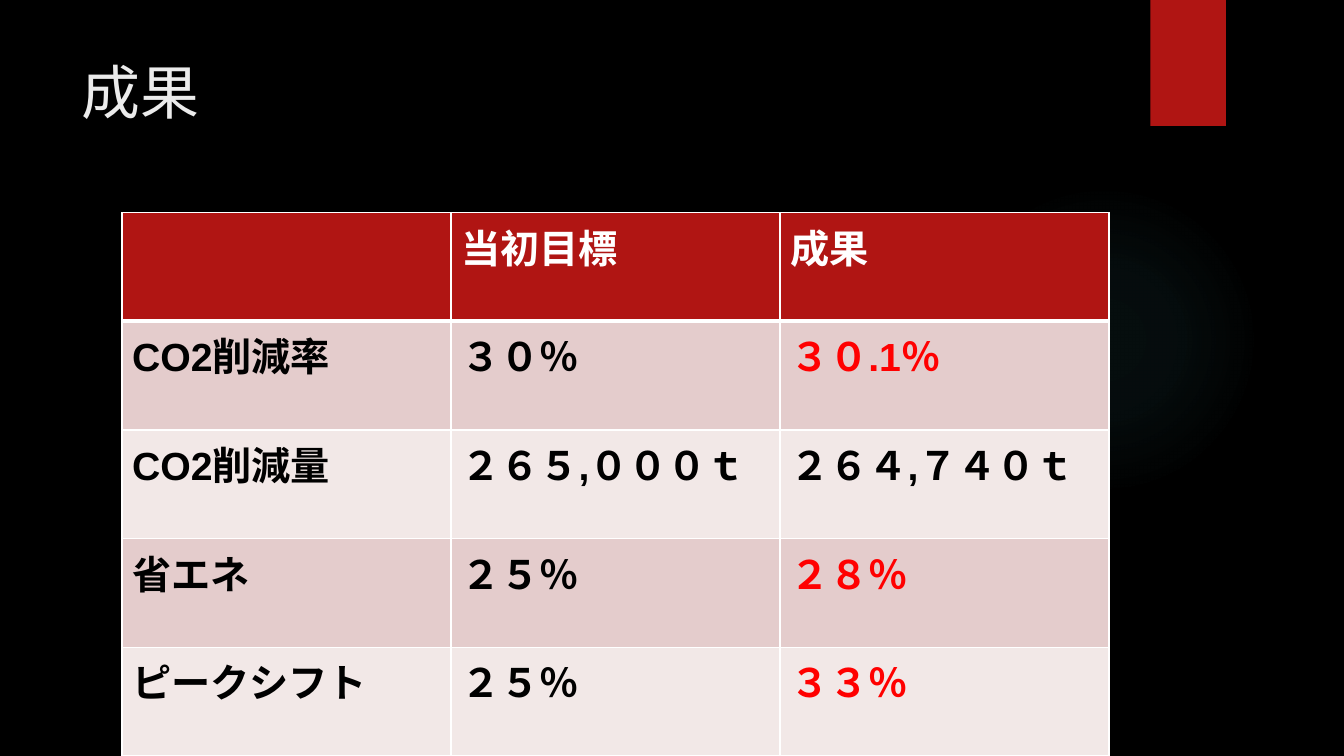
"""Build the results slide: a title and a table of targets against outcomes."""
from pptx import Presentation
from pptx.dml.color import RGBColor as RGB
from pptx.enum.shapes import MSO_SHAPE as SHAPE
from pptx.enum.text import MSO_ANCHOR as ANCHOR, PP_ALIGN as ALIGN
from pptx.oxml import parse_xml
from pptx.oxml.ns import nsdecls
from pptx.util import Inches, Pt

BLACK = RGB(0x00, 0x00, 0x00)
WHITE = RGB(0xFF, 0xFF, 0xFF)
PALE = RGB(0xEB, 0xEB, 0xEB)
CRIMSON = RGB(0xB0, 0x15, 0x13)
RED = RGB(0xFF, 0x00, 0x00)
ROSE = RGB(0xE4, 0xCC, 0xCC)
BLUSH = RGB(0xF2, 0xE8, 0xE7)
TEAL = RGB(0x50, 0xB9, 0xC1)


def add_plain(kind, left, top, width, height):
    shape = slide.shapes.add_shape(
        kind, Inches(left), Inches(top), Inches(width), Inches(height))
    shape.shadow.inherit = False
    shape.line.fill.background()
    return shape


def add_edge(cell, side, width):
    cell._tc.get_or_add_tcPr().append(parse_xml(
        f'<a:ln{side} {nsdecls("a")} w="{Pt(width)}"><a:solidFill>'
        f'<a:srgbClr val="{WHITE}"/></a:solidFill></a:ln{side}>'))


prs = Presentation()
prs.slide_width, prs.slide_height = Inches(13.33), Inches(7.5)
slide = prs.slides.add_slide(prs.slide_layouts[5])
slide.background.fill.solid()
slide.background.fill.fore_color.rgb = BLACK

glow = add_plain(SHAPE.OVAL, 9.41, 1.83, 3.08, 3.08)
stops = "".join(
    f'<a:gs pos="{pos * 1000}"><a:srgbClr val="{TEAL}">'
    f'<a:alpha val="{alpha * 1000}"/></a:srgbClr></a:gs>'
    for pos, alpha in [(0, 7), (36, 6), (69, 0)])
glow._element.spPr.prstGeom.addnext(parse_xml(
    f'<a:gradFill {nsdecls("a")}><a:gsLst>{stops}</a:gsLst><a:path path="circle">'
    '<a:fillToRect l="50000" t="50000" r="50000" b="50000"/></a:path></a:gradFill>'))

tab = add_plain(SHAPE.RECTANGLE, 11.41, 0, 0.75, 1.25)
tab.fill.solid()
tab.fill.fore_color.rgb = CRIMSON

title = slide.shapes.title
slide.shapes._spTree.append(title._element)
title.left, title.top = Inches(0.71), Inches(0.5)
title.width, title.height = Inches(10.29), Inches(1.53)
title.text_frame.text = "成果"
title.text_frame.vertical_anchor = ANCHOR.TOP
head = title.text_frame.paragraphs[0]
head.alignment = ALIGN.LEFT
font = head.runs[0].font
font.name, font.size = "TeX Gyre Adventor", Pt(42)
font.color.rgb = PALE

rows = [
    ("", "当初目標", "成果"),
    ("CO2削減率", "３０％", "３０.1％"),
    ("CO2削減量", "２６５,０００ｔ", "２６４,７４０ｔ"),
    ("省エネ", "２５％", "２８％"),
    ("ピークシフト", "２５％", "３３％"),
]
better = {1, 3, 4}
table = slide.shapes.add_table(
    len(rows), 3, Inches(1.21), Inches(2.11), Inches(9.79), Inches(5.39)).table
for r, row in enumerate(rows):
    for c, text in enumerate(row):
        cell = table.cell(r, c)
        for side in "LRTB":
            thick = (r == 0 and side == "B") or (r == 1 and side == "T")
            add_edge(cell, side, 3 if thick else 1)
        cell.fill.solid()
        cell.fill.fore_color.rgb = CRIMSON if r == 0 else ROSE if r % 2 else BLUSH
        cell.text_frame.text = text
        for run in cell.text_frame.paragraphs[0].runs:
            font = run.font
            font.name, font.size, font.bold = "Arial", Pt(28), True
            won = c == 2 and r in better
            font.color.rgb = WHITE if r == 0 else RED if won else BLACK

prs.save("out.pptx")
